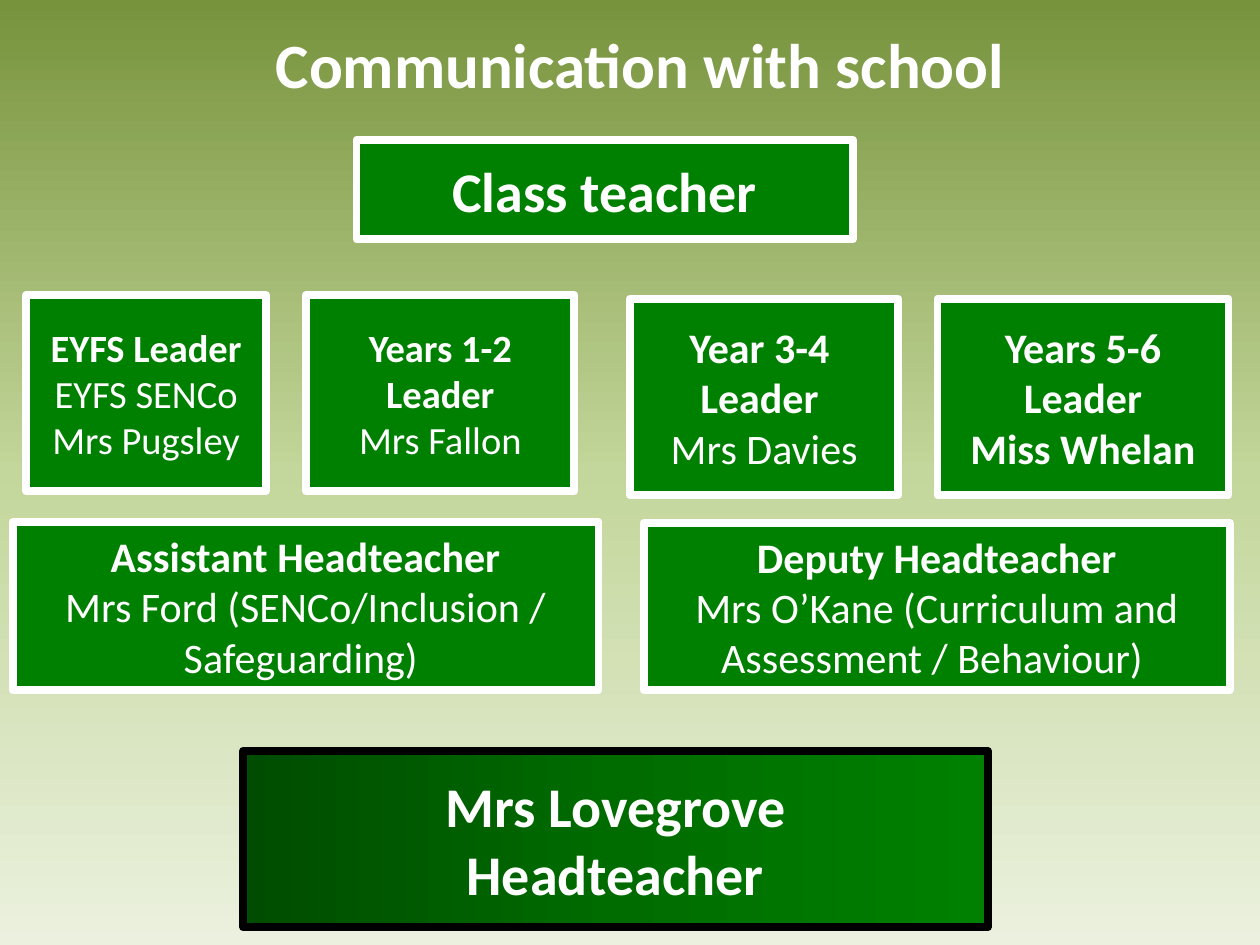
from lxml.etree import SubElement
from pptx import Presentation
from pptx.dml.color import RGBColor
from pptx.enum.shapes import MSO_SHAPE
from pptx.enum.text import MSO_ANCHOR, MSO_AUTO_SIZE, PP_ALIGN
from pptx.oxml.ns import qn
from pptx.util import Inches, Pt

WHITE = RGBColor(0xFF, 0xFF, 0xFF)
BLACK = RGBColor(0, 0, 0)
GREEN = RGBColor(0, 0x80, 0)
DEEP = RGBColor(0, 0x4C, 0)
MID = RGBColor(0, 0x6C, 0)
OLIVE = RGBColor(0x77, 0x93, 0x3C)
LIME = RGBColor(0xC3, 0xD6, 0x9B)
PALE = RGBColor(0xEB, 0xF1, 0xDE)

LEADERS = [
    ((0.21, 2.34, 1.9, 1.56), 22,
     [("EYFS Leader", True), ("EYFS SENCo", False), ("Mrs Pugsley", False)]),
    ((2.43, 2.34, 2.13, 1.56), 22,
     [("Years 1-2 Leader", True), ("Mrs Fallon", False)]),
    ((5, 2.37, 2.13, 1.56), 24,
     [("Year 3-4 ", True), ("Leader ", True), ("Mrs Davies", False)]),
    ((7.44, 2.37, 2.31, 1.56), 24,
     [("Years 5-6", True), ("Leader", True), ("Miss Whelan", True)]),
]
HEADS = [
    ((0.1, 4.14, 4.65, 1.34), 24,
     [("Assistant Headteacher", True),
      ("Mrs Ford (SENCo/Inclusion / Safeguarding) ", False)]),
    ((5.11, 4.15, 4.65, 1.33), 24,
     [("Deputy Headteacher", True),
      ("Mrs O’Kane (Curriculum and Assessment / Behaviour) ", False)]),
]


def put(item, values):
    for name, value in values.items():
        setattr(item, name, value)


def blend(fill, root, angle, colors):
    fill.gradient()
    fill.gradient_angle = angle
    stops = root.find(".//" + qn("a:gsLst"))
    for stop in list(stops):
        stops.remove(stop)
    for i, color in enumerate(colors):
        stop = SubElement(stops, qn("a:gs"), pos=str(i * 100000 // (len(colors) - 1)))
        SubElement(stop, qn("a:srgbClr"), val=str(color))


def write(frame, lines, size, align):
    for i, (text, bold) in enumerate(lines):
        para = frame.paragraphs[0] if i == 0 else frame.add_paragraph()
        para.alignment = align
        run = para.add_run()
        run.text = text
        put(run.font, {"name": "Calibri", "size": Pt(size), "bold": bold})
        run.font.color.rgb = WHITE


def title(slide, box, text):
    frame = slide.shapes.add_textbox(*map(Inches, box)).text_frame
    put(frame, {"word_wrap": True, "auto_size": MSO_AUTO_SIZE.SHAPE_TO_FIT_TEXT})
    write(frame, [(text, True)], 36, PP_ALIGN.LEFT)


def card(slide, box, size, lines, edge=WHITE):
    shape = slide.shapes.add_shape(MSO_SHAPE.RECTANGLE, *map(Inches, box))
    shape.shadow.inherit = False
    shape.fill.solid()
    shape.fill.fore_color.rgb = GREEN
    shape.line.color.rgb = edge
    shape.line.width = Pt(4.5)
    SubElement(shape.line._ln, qn("a:round"))
    put(shape.text_frame, {"word_wrap": True, "vertical_anchor": MSO_ANCHOR.MIDDLE})
    write(shape.text_frame, lines, size, PP_ALIGN.CENTER)
    return shape


def tier(slide, cards):
    for box, size, lines in cards:
        card(slide, box, size, lines)


def top(slide, box):
    lines = [("Mrs Lovegrove", True), ("Headteacher", True)]
    shape = card(slide, box, 32, lines, BLACK)
    blend(shape.fill, shape._element, 0, [DEEP, MID, GREEN])


def main():
    deck = Presentation()
    put(deck, {"slide_width": Inches(10), "slide_height": Inches(7.5)})
    slide = deck.slides.add_slide(deck.slide_layouts[6])
    blend(slide.background.fill, slide._element, 270, [OLIVE, LIME, PALE])
    title(slide, (2.09, 0.15, 6.46, 0.71), "Communication with school")
    card(slide, (2.83, 1.11, 3.94, 0.79), 32, [("Class teacher", True)])
    tier(slide, LEADERS)
    tier(slide, HEADS)
    top(slide, (1.93, 5.96, 5.91, 1.4))
    deck.save("out.pptx")


if __name__ == "__main__":
    main()
